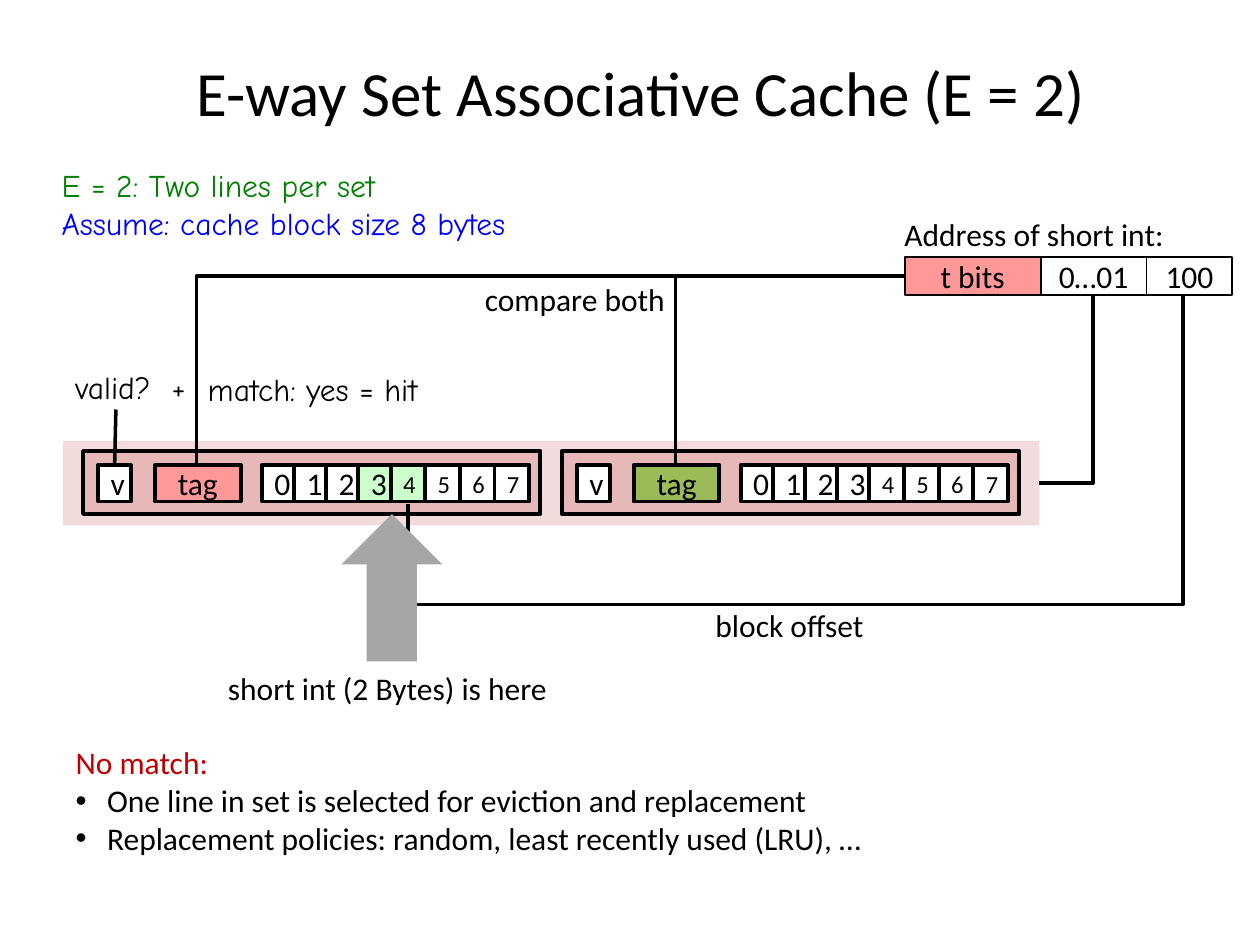
from lxml.etree import SubElement
from pptx import Presentation
from pptx.dml.color import RGBColor
from pptx.enum.shapes import MSO_CONNECTOR, MSO_SHAPE
from pptx.enum.text import MSO_ANCHOR, MSO_AUTO_SIZE, PP_ALIGN
from pptx.oxml.ns import qn
from pptx.util import Inches, Pt

BLACK, WHITE, PINK, MINT, OLIVE = "000000", "FFFFFF", "FF9999", "CCFFCC", "9BBB59"
COMIC = "Comic Neue"
TITLE = "E-way Set Associative Cache (E = 2)"
ADDRESS = [("t bits", 7.18, 1.08, PINK), ("0…01", 8.26, 0.84, WHITE), ("100", 9.1, 0.68, WHITE)]
WAYS = [
    {"left": 0.66, "tag": PINK, "hits": (3, 4)},
    {"left": 4.46, "tag": OLIVE, "hits": ()},
]
ELBOWS = [
    ("bentConnector2", 7.71, 2.87, 1.5, 0.43, 90, False, None),
    ("bentConnector2", 5.36, 2.19, 1.82, 1.51, 180, True, None),
    ("bentConnector2", 1.56, 2.19, 5.62, 1.51, 180, True, None),
    ("bentConnector3", 5.49, 0.1, 1.65, 6.15, 90, False, 148400),
]
LABELS = [
    (7.08, 1.66, 2.32, 0.3, [("Address of short int:", BLACK)], "Calibri"),
    (3.75, 2.17, 1.67, 0.3, [("compare both", BLACK)], "Calibri"),
    (0.5, 2.87, 1.15, 0.4, [("valid?  +", BLACK)], COMIC),
    (1.55, 2.89, 2.08, 0.4, [("match: yes = hit", BLACK)], COMIC),
    (5.58, 4.76, 1.42, 0.3, [("block offset", BLACK)], "Calibri"),
    (0.39, 1.27, 4.12, 0.71, [("E = 2: Two lines per set", "008000"),
                              ("Assume: cache block size 8 bytes", "0000FF")], COMIC),
    (1.71, 5.26, 2.81, 0.3, [("short int (2 Bytes) is here", BLACK)], "Calibri"),
]
MISS = [
    ("No match:", "C00000"),
    ("One line in set is selected for eviction and replacement", BLACK),
    ("Replacement policies: random, least recently used (LRU), …", BLACK),
]


def rgb(value):
    return RGBColor.from_string(value)


def write(tf, lines, size=18, font="Calibri", align=PP_ALIGN.LEFT):
    for i, (text, color) in enumerate(lines):
        p = tf.add_paragraph() if i else tf.paragraphs[0]
        p.alignment = align
        p.space_before = Pt(0)
        r = p.add_run()
        r.text = text
        r.font.size = Pt(size)
        r.font.name = font
        r.font.color.rgb = rgb(color)


def place(sp, x, y, w, h):
    sp.left, sp.top, sp.width, sp.height = (Inches(v) for v in (x, y, w, h))


def box(shapes, x, y, w, h, fill, line=0, text="", size=18, kind=MSO_SHAPE.RECTANGLE):
    sp = shapes.add_shape(kind, *(Inches(v) for v in (x, y, w, h)))
    sp.shadow.inherit = False
    sp.fill.solid()
    sp.fill.fore_color.rgb = rgb(fill)
    if line:
        sp.line.color.rgb = rgb(BLACK)
        sp.line.width = Pt(line)
    else:
        sp.line.fill.background()
    if text:
        sp.text_frame.vertical_anchor = MSO_ANCHOR.MIDDLE
        write(sp.text_frame, [(text, BLACK)], size, align=PP_ALIGN.CENTER)


def wire(shapes, kind, x1, y1, x2, y2):
    c = shapes.add_connector(kind, *(Inches(v) for v in (x1, y1, x2, y2)))
    c.line.color.rgb = rgb(BLACK)
    c.line.width = Pt(2)
    SubElement(c._element.spPr, qn("a:effectLst"))
    return c


def elbow(shapes, preset, x, y, w, h, turn, flip, adj):
    y1, y2 = (y + h, y) if flip else (y, y + h)
    spPr = wire(shapes, MSO_CONNECTOR.ELBOW, x, y1, x + w, y2)._element.spPr
    spPr.find(qn("a:xfrm")).set("rot", str(turn * 60000))
    geom = spPr.find(qn("a:prstGeom"))
    geom.set("prst", preset)
    if adj:
        SubElement(geom.find(qn("a:avLst")), qn("a:gd"), name="adj1", fmla=f"val {adj}")


def cache_line(shapes, left, tag, hits):
    top, height, line = 3.69, 0.29, 2.25
    box(shapes, left, 3.58, 3.63, 0.5, "E6B9B8", line)
    box(shapes, left + 0.12, top, 0.26, height, WHITE, line, "v")
    box(shapes, left + 0.57, top, 0.68, height, tag, line, "tag")
    x = left + 1.42
    for byte in range(8):
        width, size = (1.02 / 4, 18) if byte < 4 else (1.1 / 4, 14)
        fill = MINT if byte in hits else WHITE
        box(shapes, x, top, width, height, fill, line, str(byte), size)
        x += width


def main():
    prs = Presentation()
    prs.slide_width, prs.slide_height = Inches(10), Inches(7.5)
    s = prs.slides.add_slide(prs.slide_layouts[1])
    title, body = s.placeholders
    place(title, 0.39, 0.31, 9.39, 0.83)
    write(title.text_frame, [(TITLE, BLACK)], 36, align=PP_ALIGN.CENTER)

    for text, x, w, fill in ADDRESS:
        box(s.shapes, x, 2.04, w, 0.3, fill, 1, text)

    cache_set = s.shapes.add_group_shape().shapes
    box(cache_set, 0.5, 3.5, 7.75, 0.67, "F2DCDB")
    for way in WAYS:
        cache_line(cache_set, **way)

    for spec in ELBOWS:
        elbow(s.shapes, *spec)
    wire(s.shapes, MSO_CONNECTOR.STRAIGHT, 0.92, 3.25, 0.91, 3.69)
    box(s.shapes, 2.71, 4.08, 0.8, 1.17, "A6A6A6", kind=MSO_SHAPE.UP_ARROW)

    for x, y, w, h, lines, font in LABELS:
        sp = s.shapes.add_textbox(*(Inches(v) for v in (x, y, w, h)))
        sp.text_frame.word_wrap = False
        sp.text_frame.auto_size = MSO_AUTO_SIZE.SHAPE_TO_FIT_TEXT
        write(sp.text_frame, lines, font=font)

    place(body, 0.5, 5.85, 6.65, 0.99)
    body.text_frame.auto_size = MSO_AUTO_SIZE.NONE
    body.text_frame.word_wrap = False
    write(body.text_frame, MISS)
    for i, p in enumerate(body.text_frame.paragraphs):
        pPr = p._p.get_or_add_pPr()
        indent = Inches(0.25) if i else 0
        pPr.set("marL", str(indent))
        pPr.set("indent", str(-indent))
        if i:
            SubElement(pPr, qn("a:buChar"), char="•")
        else:
            SubElement(pPr, qn("a:buNone"))

    prs.save("out.pptx")


if __name__ == "__main__":
    main()
